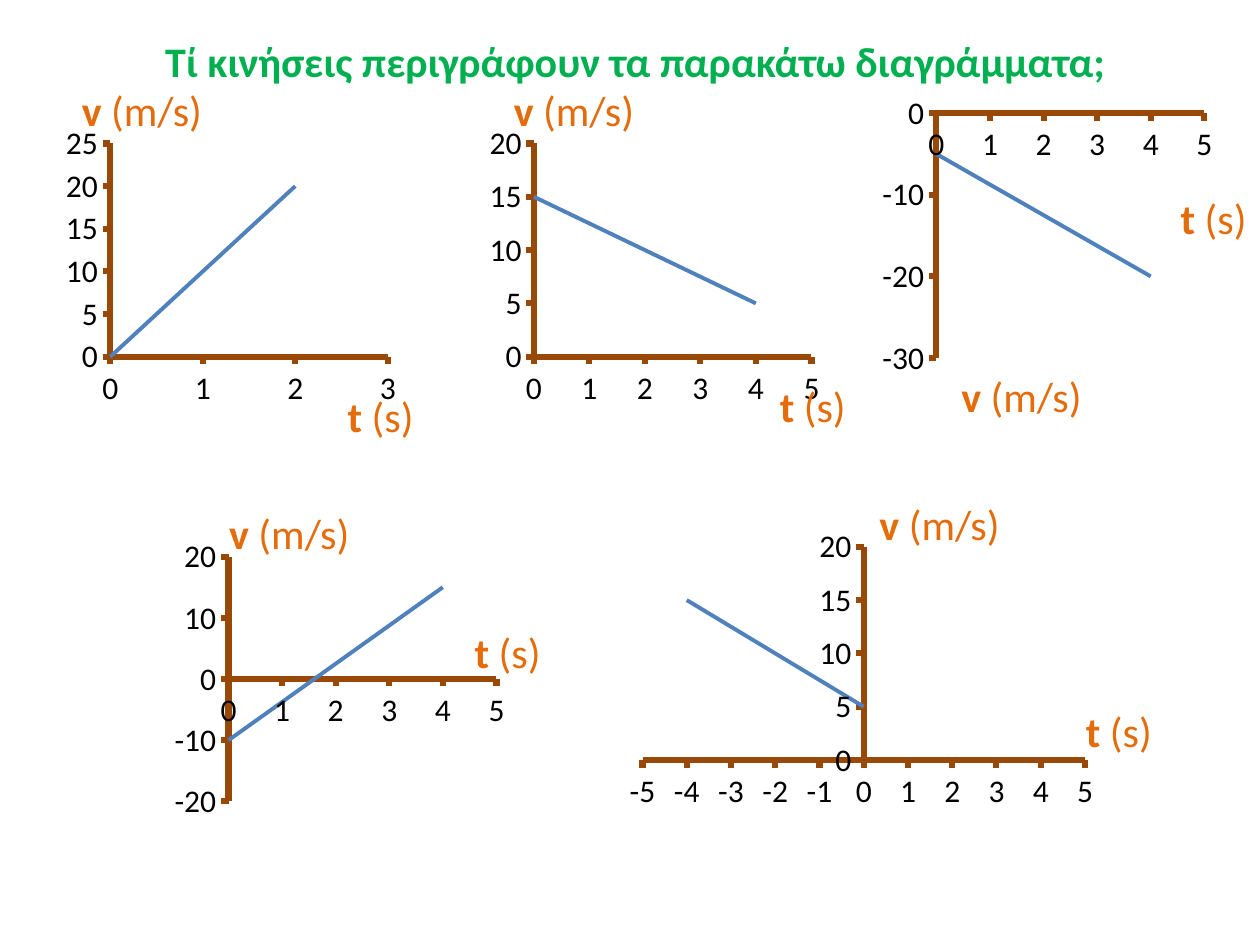
from collections import namedtuple

from pptx import Presentation
from pptx import util as u
from pptx.chart.data import XyChartData
from pptx.dml.color import RGBColor
from pptx.enum import chart as ch, dml, text

Theme = namedtuple("Theme", "font title label axis line grid ticks title_pt label_pt tick_pt")
T = Theme(
    font="Calibri",
    title=RGBColor(0x00, 0xB0, 0x50),
    label=RGBColor(0xE4, 0x6C, 0x0A),
    axis=RGBColor(0x98, 0x48, 0x07),
    line=RGBColor(0x4F, 0x81, 0xBD),
    grid=RGBColor(0xFF, 0xFF, 0xFF),
    ticks=RGBColor(0, 0, 0),
    title_pt=u.Pt(24),
    label_pt=u.Pt(24),
    tick_pt=u.Pt(18),
)


def style_font(font, size, color, bold=False):
    font.name, font.size, font.bold = T.font, size, bold
    font.color.rgb = color


def style_axis(axis, low, high, step):
    axis.minimum_scale, axis.maximum_scale, axis.major_unit = low, high, step
    axis.major_tick_mark = ch.XL_TICK_MARK.OUTSIDE
    axis.minor_tick_mark = ch.XL_TICK_MARK.NONE
    axis.tick_label_position = ch.XL_TICK_LABEL_POSITION.NEXT_TO_AXIS
    axis.format.line.color.rgb = T.axis
    axis.format.line.width = u.Pt(3.5)


prs = Presentation()
prs.slide_width, prs.slide_height = u.Cm(25.4), u.Cm(19.05)
s = prs.slides.add_slide(prs.slide_layouts[5])

# Title
sp = s.shapes.title
sp.left, sp.top, sp.width, sp.height = u.Cm(2.39), u.Cm(0.58), u.Cm(20.83), u.Cm(1.28)
tf = sp.text_frame
tf.word_wrap = True
tf.auto_size = text.MSO_AUTO_SIZE.SHAPE_TO_FIT_TEXT
tf.vertical_anchor = text.MSO_ANCHOR.TOP
p = tf.paragraphs[0]
p.alignment = text.PP_ALIGN.CENTER
r = p.add_run()
r.text = "Τί κινήσεις περιγράφουν τα παρακάτω διαγράμματα;"
style_font(r.font, T.title_pt, T.title, True)

# Velocity diagrams: left, top, width (cm), points (t, v), t axis, v axis
diagrams = [
    (1.19, 2.39, 6.93, [(0, 0), (2, 20)], (0, 3, 1), (0, 25, 5)),
    (9.73, 2.39, 6.93, [(0, 15), (4, 5)], (0, 5, 1), (0, 20, 5)),
    (17.65, 1.78, 6.93, [(0, -5), (4, -20)], (0, 5, 1), (-30, 0, 10)),
    (3.38, 10.72, 6.93, [(0, -10), (4, 15)], (0, 5, 1), (-20, 20, 10)),
    (12.5, 10.52, 9.73, [(-4, 15), (0, 5)], (-5, 5, 1), (0, 20, 5)),
]
for left, top, width, points, t_scale, v_scale in diagrams:
    data = XyChartData()
    series = data.add_series("Series 1")
    for t, v in points:
        series.add_data_point(t, v)
    chart = s.shapes.add_chart(
        ch.XL_CHART_TYPE.XY_SCATTER_LINES_NO_MARKERS,
        u.Cm(left), u.Cm(top), u.Cm(width), u.Cm(5.94), data).chart
    chart.has_legend = chart.has_title = False
    style_font(chart.font, T.tick_pt, T.ticks)

    style_axis(chart.category_axis, *t_scale)
    style_axis(chart.value_axis, *v_scale)
    chart.category_axis.has_major_gridlines = False
    chart.value_axis.has_major_gridlines = True
    grid = chart.value_axis.major_gridlines.format.line
    grid.color.rgb, grid.width = T.grid, u.Pt(0.75)
    grid.dash_style = dml.MSO_LINE.DASH

    chart.plots[0].vary_by_categories = False
    line = chart.plots[0].series[0]
    line.smooth = False
    line.format.line.color.rgb, line.format.line.width = T.line, u.Pt(2.25)

# Axis labels: symbol, unit, width and places (cm)
labels = [
    ("v ", "(m/s)", 2.95,
     [(1.4, 1.57), (10.11, 1.57), (19.13, 7.34), (4.37, 10.11), (17.48, 9.93)]),
    ("t ", "(s)", 1.85,
     [(6.76, 7.75), (15.47, 7.54), (23.55, 3.76), (9.32, 12.5), (21.64, 14.1)]),
]
for symbol, unit, width, places in labels:
    for left, top in places:
        sp = s.shapes.add_textbox(u.Cm(left), u.Cm(top), u.Cm(width), u.Cm(1.28))
        tf = sp.text_frame
        tf.word_wrap = False
        tf.auto_size = text.MSO_AUTO_SIZE.SHAPE_TO_FIT_TEXT
        p = tf.paragraphs[0]
        for part, bold in ((symbol, True), (unit, False)):
            r = p.add_run()
            r.text = part
            style_font(r.font, T.label_pt, T.label, bold)

prs.save("out.pptx")
